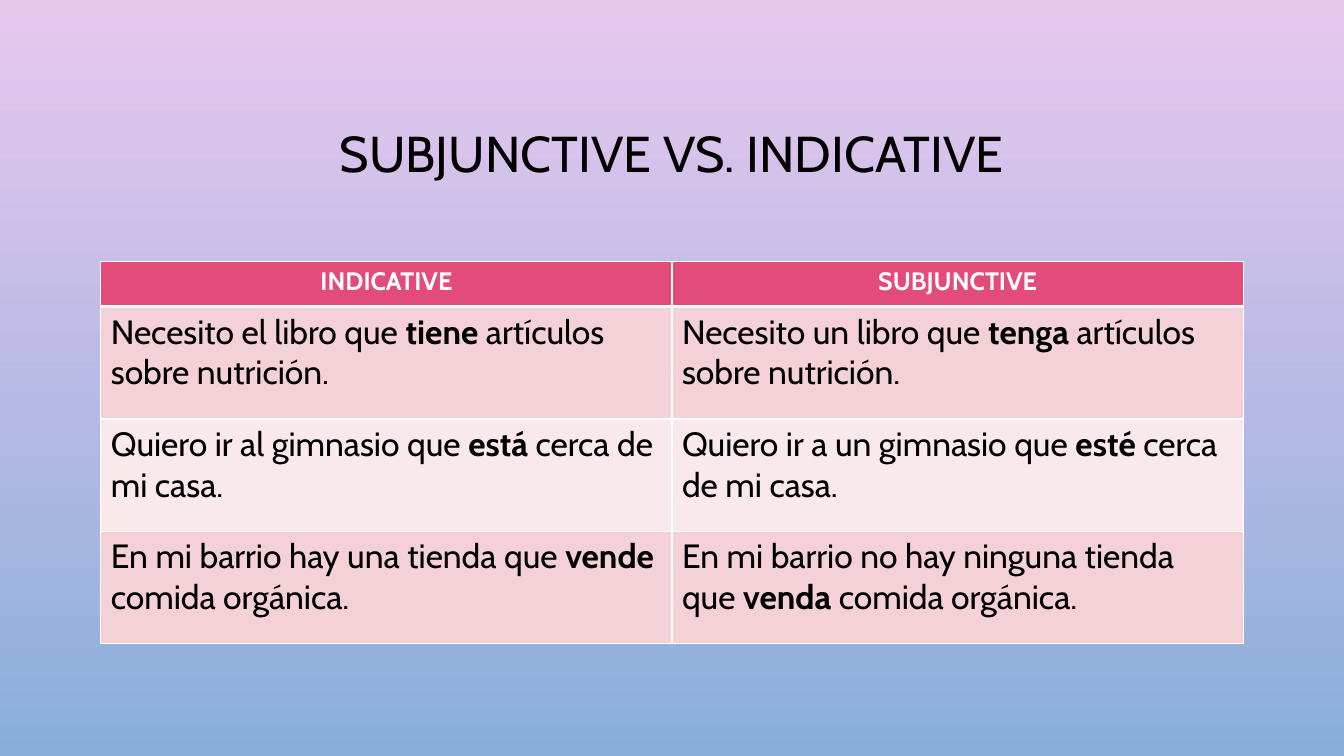
from lxml.etree import SubElement
from pptx import Presentation
from pptx.dml.color import RGBColor
from pptx.enum.text import MSO_ANCHOR, PP_ALIGN
from pptx.oxml.ns import qn
from pptx.util import Emu, Pt

PX = 9525  # EMU per px, 96 px to the inch
FONT = "Cabin"
PINK_SKY = RGBColor(0xE9, 0xC8, 0xEF)
BLUE_SKY = RGBColor(0x89, 0xAE, 0xDB)
BLACK = RGBColor(0, 0, 0)
WHITE = RGBColor(0xFF, 0xFF, 0xFF)
HEADER = RGBColor(0xE3, 0x4B, 0x7A)
BANDS = [RGBColor(0xF4, 0xD0, 0xD7), RGBColor(0xFA, 0xE9, 0xEC)]

HEADINGS = ["INDICATIVE", "SUBJUNCTIVE"]
# Each sentence is split into: before the verb, the verb, after the verb
SENTENCES = [
    [("Necesito el libro que ", "tiene ", "artículos sobre nutrición."),
     ("Necesito un libro que ", "tenga ", "artículos sobre nutrición.")],
    [("Quiero ir al gimnasio que ", "está ", "cerca de mi casa."),
     ("Quiero ir a un gimnasio que ", "esté ", "cerca de mi casa.")],
    [("En mi barrio hay una tienda que ", "vende", " comida orgánica."),
     ("En mi barrio no hay ninguna tienda que ", "venda", " comida orgánica.")],
]


def px(*lengths):
    return [Emu(length * PX) for length in lengths]


def add_span(para, text, size, color, bold=False):
    span = para.add_run()
    span.text = text
    span.font.name = FONT
    span.font.size = Pt(size)
    span.font.bold = bold
    span.font.color.rgb = color


def paint_background(page):
    fill = page.background.fill
    fill.gradient()
    fill.gradient_angle = 270
    for stop, color in zip(fill.gradient_stops, (PINK_SKY, BLUE_SKY)):
        stop.color.rgb = color


def add_title(page, left, top, width, height):
    box = page.shapes.add_textbox(*px(left, top, width, height))
    frame = box.text_frame
    frame.word_wrap = True
    frame.vertical_anchor = MSO_ANCHOR.MIDDLE
    para = frame.paragraphs[0]
    para.alignment = PP_ALIGN.CENTER
    para.line_spacing = 0.9
    add_span(para, "SUBJUNCTIVE VS. INDICATIVE", 36, BLACK)


def style_cell(cell, color, top=1, bottom=1):
    """Fill the cell and rule it in white; top and bottom are in points."""
    properties = cell._tc.get_or_add_tcPr()
    for side, points in (("L", 1), ("R", 1), ("T", top), ("B", bottom)):
        line = SubElement(properties, qn(f"a:ln{side}"), w=str(Pt(points)))
        SubElement(SubElement(line, qn("a:solidFill")), qn("a:srgbClr"), val=str(WHITE))
    cell.fill.solid()
    cell.fill.fore_color.rgb = color


def add_comparison(page, left, top, width, header_height, row_height):
    height = header_height + row_height * len(SENTENCES)
    table = page.shapes.add_table(len(SENTENCES) + 1, len(HEADINGS),
                                  *px(left, top, width, height)).table
    table.horz_banding = False
    for row in table.rows:
        row.height = Emu(row_height * PX)
    table.rows[0].height = Emu(header_height * PX)

    for column, heading in enumerate(HEADINGS):
        cell = table.cell(0, column)
        style_cell(cell, HEADER, bottom=3)
        para = cell.text_frame.paragraphs[0]
        para.alignment = PP_ALIGN.CENTER
        add_span(para, heading, 18, WHITE, bold=True)

    for index, pair in enumerate(SENTENCES):
        for column, (before, verb, after) in enumerate(pair):
            cell = table.cell(index + 1, column)
            style_cell(cell, BANDS[index % 2], top=1 if index else 3)
            para = cell.text_frame.paragraphs[0]
            add_span(para, before, 24, BLACK)
            add_span(para, verb, 24, BLACK, bold=True)
            add_span(para, after, 24, BLACK)


def main():
    deck = Presentation()
    deck.slide_width, deck.slide_height = px(1280, 720)
    page = deck.slides.add_slide(deck.slide_layouts[6])
    paint_background(page)
    add_title(page, 96, 65, 1088, 168)
    add_comparison(page, 96, 249, 1088, header_height=43, row_height=107)
    deck.save("out.pptx")


if __name__ == "__main__":
    main()
